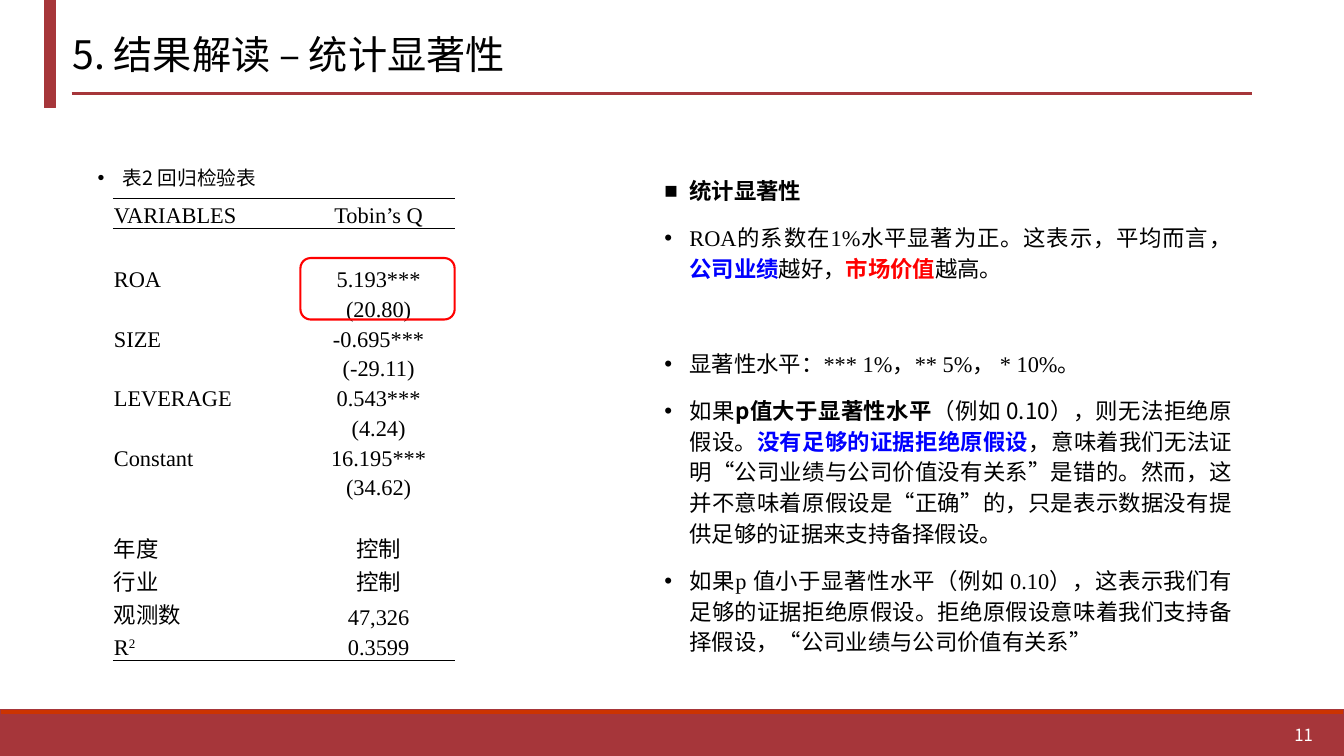
from lxml.etree import SubElement
from pptx import Presentation
from pptx.dml.color import RGBColor
from pptx.enum.shapes import MSO_CONNECTOR as CONNECTOR, MSO_SHAPE as SHAPE
from pptx.enum.text import MSO_ANCHOR as ANCHOR, PP_ALIGN as ALIGN
from pptx.oxml import parse_xml
from pptx.oxml.ns import nsdecls, qn
from pptx.util import Inches, Pt

SANS, SERIF = "Noto Sans CJK SC", "Times New Roman"
BLACK, WHITE, BLUE, RED, MAROON = "000000", "FFFFFF", "0000FF", "FF0000", "A6363A"
rgb = RGBColor.from_string


def style(font, size, face=SANS, color=BLACK, bold=False):
    font.size, font.bold = Pt(size), bold
    font.color.rgb = rgb(color)
    font.name = face
    latin = font._element.find(qn("a:latin"))
    latin.addnext(parse_xml(f'<a:ea {nsdecls("a")} typeface="{SANS}"/>'))


def bullet(paragraph, mark, after=12):
    paragraph.alignment = ALIGN.JUSTIFY
    paragraph.line_spacing, paragraph.space_after = 1.14, Pt(after)
    props = paragraph._p.get_or_add_pPr()
    props.set("marL", str(Inches(0.25)))
    props.set("indent", str(Inches(-0.25)))
    SubElement(props, qn("a:buFont")).set("typeface", "Arial")
    SubElement(props, qn("a:buChar")).set("char", mark)


deck = Presentation()
deck.slide_width, deck.slide_height = Inches(13.33), Inches(7.5)
slide = deck.slides.add_slide(deck.slide_layouts[6])
shapes = slide.shapes

# Footer band, its upper strip and the bar beside the title
for left, top, width, height, color in [
    (0, 7.09, 13.33, 0.41, MAROON),
    (0, 7.04, 13.33, 0.05, "CC3300"),
    (0.44, 0, 0.11, 1.07, MAROON),
]:
    band = shapes.add_shape(SHAPE.RECTANGLE, Inches(left), Inches(top), Inches(width), Inches(height))
    band.shadow.inherit = False
    band.fill.solid()
    band.fill.fore_color.rgb = rgb(color)
    band.line.color.rgb = rgb(MAROON)
    band.line.width = Pt(1)

# Rule under the title
rule = shapes.add_connector(CONNECTOR.STRAIGHT, Inches(0.71), Inches(0.93), Inches(12.42), Inches(0.93))
rule.line.color.rgb = rgb(MAROON)
rule.line.width = Pt(2.25)
SubElement(rule._element.spPr, qn("a:effectLst"))

# Title, page number and table caption
for text, left, top, width, height, size, color, align in [
    ("5. 结果解读 – 统计显著性", 0.62, 0, 12.07, 1.07, 28, BLACK, ALIGN.LEFT),
    ("11", 10.12, 7.09, 3, 0.4, 12, WHITE, ALIGN.RIGHT),
    ("表2 回归检验表", 0.87, 1.56, 2.18, 0.41, 14, BLACK, None),
]:
    frame = shapes.add_textbox(Inches(left), Inches(top), Inches(width), Inches(height)).text_frame
    frame.word_wrap = True
    line = frame.paragraphs[0]
    line.text = text
    if align is None:
        bullet(line, "•")
    else:
        frame.vertical_anchor = ANCHOR.MIDDLE
        line.alignment = align
    style(line.font, size, color=color)

# Regression table
results = [
    ("VARIABLES", "Tobin’s Q"),
    ("", ""),
    ("ROA", "5.193***"),
    ("", "(20.80)"),
    ("SIZE", "-0.695***"),
    ("", "(-29.11)"),
    ("LEVERAGE", "0.543***"),
    ("", "(4.24)"),
    ("Constant", "16.195***"),
    ("", "(34.62)"),
    ("", ""),
    ("年度", "控制"),
    ("行业", "控制"),
    ("观测数", "47,326"),
    ("R", "0.3599"),
]
last = len(results) - 1
ruled_sides = {0: "TB", last: "B"}
tall_rows = {1: 0.34, 11: 0.33, 12: 0.33, 13: 0.33}
regression = shapes.add_table(len(results), 2, Inches(1.12), Inches(1.97), Inches(3.39), Inches(4.43)).table
regression.first_row = regression.horz_banding = False
no_grid = "{2D5ABB26-0587-4C30-8999-92F81FD0307C}"
regression._tbl.tblPr.find(qn("a:tableStyleId")).text = no_grid
for column, width in zip(regression.columns, (1.88, 1.51)):
    column.width = Inches(width)
for row, height in tall_rows.items():
    regression.rows[row].height = Inches(height)

for row, values in enumerate(results):
    for col, value in enumerate(values):
        cell = regression.cell(row, col)
        cell.fill.background()
        cell.vertical_anchor = ANCHOR.BOTTOM
        cell.margin_left = cell.margin_right = cell.margin_top = Inches(0.01)
        cell.margin_bottom = 0
        entry = cell.text_frame.paragraphs[0]
        entry.text = value
        entry.alignment = ALIGN.CENTER if col else ALIGN.LEFT
        style(entry.font, 16, SERIF)
        for place, side in enumerate(ruled_sides.get(row, "")):
            border = parse_xml(
                f'<a:ln{side} {nsdecls("a")} w="{Pt(0.5)}"><a:solidFill>'
                f'<a:srgbClr val="{BLACK}"/></a:solidFill></a:ln{side}>'
            )
            cell._tc.get_or_add_tcPr().insert(place, border)

square = regression.cell(last, 0).text_frame.paragraphs[0].add_run()
square.text = "2"
square._r.get_or_add_rPr().set("baseline", "30000")

# Frame around the ROA coefficient
highlight = shapes.add_shape(SHAPE.ROUNDED_RECTANGLE, Inches(2.98), Inches(2.56), Inches(1.53), Inches(0.61))
highlight.shadow.inherit = False
highlight.fill.background()
highlight.line.color.rgb = rgb(RED)
highlight.line.width = Pt(1.5)

# Interpretation: mark, space after, runs of (text, face, colour, bold)
points = [
    ("■", 12, [("统计显著性", SERIF, BLACK, True)]),
    ("•", 46, [
        ("ROA的系数在1%水平显著为正。这表示，平均而言，", SERIF, BLACK, False),
        ("公司业绩", SERIF, BLUE, True),
        ("越好，", SERIF, BLACK, False),
        ("市场价值", SERIF, RED, True),
        ("越高。", SERIF, BLACK, False),
    ]),
    ("•", 12, [("显著性水平：*** 1%，** 5%， * 10%。", SERIF, BLACK, False)]),
    ("•", 12, [
        ("如果", SANS, BLACK, False),
        ("p值大于显著性水平", SANS, BLACK, True),
        ("（例如 0.10），则无法拒绝原假设。", SANS, BLACK, False),
        ("没有足够的证据拒绝原假设", SANS, BLUE, True),
        ("，意味着我们无法证明“公司业绩与公司价值没有关系”是错的。然而，这并不意味着原假设是“正确”的，"
         "只是表示数据没有提供足够的证据来支持备择假设。", SANS, BLACK, False),
    ]),
    ("•", 12, [
        ("如果p 值小于显著性水平（例如 0.10），这表示我们有足够的证据拒绝原假设。"
         "拒绝原假设意味着我们支持备择假设，", SERIF, BLACK, False),
        ("“公司业绩与公司价值有关系”", SANS, BLACK, False),
    ]),
]
reading = shapes.add_textbox(Inches(6.49), Inches(1.67), Inches(5.83), Inches(3.89)).text_frame
reading.word_wrap = True
for index, (mark, after, pieces) in enumerate(points):
    point = reading.add_paragraph() if index else reading.paragraphs[0]
    bullet(point, mark, after)
    for text, face, color, bold in pieces:
        piece = point.add_run()
        piece.text = text
        style(piece.font, 16, face, color, bold)

deck.save("out.pptx")
